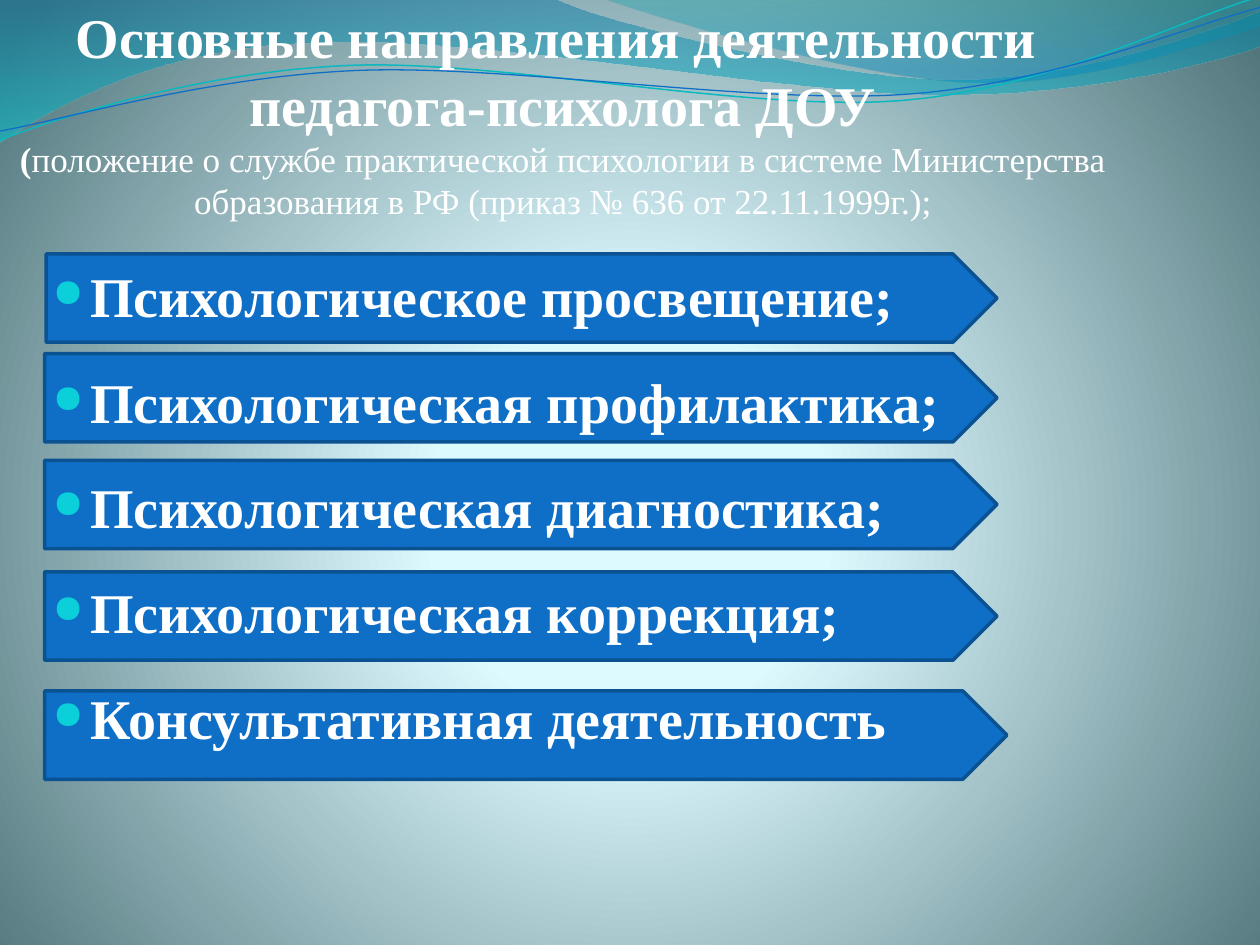
"""Build a slide listing the main lines of work of a preschool psychologist."""
from lxml import etree
from pptx import Presentation
from pptx.dml.color import RGBColor
from pptx.enum.shapes import MSO_SHAPE
from pptx.enum.text import MSO_ANCHOR, PP_ALIGN
from pptx.oxml.ns import qn
from pptx.util import Cm, Pt

PLATE = MSO_SHAPE.PENTAGON
TOP = MSO_ANCHOR.TOP
LEFT, CENTER = PP_ALIGN.LEFT, PP_ALIGN.CENTER
INCH = 2.54

THEME = {
    "font": "Times New Roman", "text": "FFFFFF", "big": 32, "small": 20,
    "plate": "0F6FC6", "edge": "0B5292", "dot": "0BD0D9",
    "back": [(0, "DEFBFF", 100), (25, "DDFAFF", 100), (100, "52767C", 100)],
    "left": [(0, "0074A1", 45), (100, "00C6CF", 55)],
    "right": [(0, "00A1A9", 30), (80, "008BBF", 45)],
    "teal": "0AB8BF", "blue": "0F6FC6",
}
GLOW = '<a:path path="circle"><a:fillToRect l="10000" t="110000" r="10000" b="100000"/></a:path>'
DOWN = '<a:lin ang="5400000" scaled="0"/>'

HEAD = [
    [("Основные направления деятельности \vпедагога-психолога ДОУ\v", "big", True),
     ("(", "small", True),
     ("положение о службе практической психологии в системе Министерства "
      "образования в РФ (приказ № 636 от 22.11.1999г.);", "small", False)],
]
ITEMS = [
    "Психологическое просвещение;",
    "Психологическая профилактика;",
    "Психологическая диагностика;",
    "Психологическая коррекция;",
    "Консультативная деятельность",
]
PLATES = [(0.93, 5.12, 19.17), (0.9, 7.13, 19.2), (0.9, 9.28, 19.2),
          (0.9, 11.53, 19.2), (0.9, 13.93, 19.4)]
PLATE_H = 1.78

BANDS = [
    ("left", [(0, -0.01), (4.4, -0.01),
              (4.76, 0.17, 6.64, 0.63, 7.58, 0.63), (8.53, 0.63, 9.58, 0.26, 10, 0.09),
              (10.01, 0.36), (9.83, 0.44, 8.7, 0.76, 7.46, 0.75),
              (6.22, 0.75, 3.82, 0.28, 2.57, 0.34), (1.29, 0.35, 0.46, 0.83, -0.01, 1.13)]),
    ("right", [(4.79, -0.01), (5.09, 0.11, 6.82, 0.62, 7.69, 0.65),
               (8.56, 0.69, 9.61, 0.32, 10, 0.21), (10, 0)]),
]
WAVES = [
    ("teal", 0.85, [(0, 1.11), (0.48, 0.93, 1.58, 0.57, 2.77, 0.52),
                    (3.95, 0.47, 5.93, 0.89, 7.13, 0.8), (8.33, 0.71, 9.38, 0.15, 9.98, -0.02)]),
    ("blue", 0.75, [(0, 1.04), (0.47, 0.96, 1.64, 0.61, 2.83, 0.56),
                    (4.03, 0.51, 5.97, 0.83, 7.17, 0.75), (8.36, 0.67, 9.41, 0.21, 10, 0.06)]),
]


def assign(thing, **values):
    for name, value in values.items():
        setattr(thing, name, value)


def color(name):
    return RGBColor.from_string(THEME[name])


def blend(holder, name, course):
    stops = "".join(
        f'<a:gs pos="{pos * 1000}"><a:srgbClr val="{rgb}"><a:alpha val="{alpha * 1000}"/>'
        f'</a:srgbClr></a:gs>' for pos, rgb, alpha in THEME[name])
    space = "http://schemas.openxmlformats.org/drawingml/2006/main"
    grad = etree.fromstring(
        f'<a:gradFill xmlns:a="{space}" rotWithShape="1"><a:gsLst>{stops}</a:gsLst>{course}</a:gradFill>')
    holder.replace(holder.find(qn("a:solidFill")), grad)


def outline(slide, moves, close):
    spots = [(Cm(move[i] * INCH), Cm(move[i + 1] * INCH))
             for move in moves for i in range(0, len(move), 2)]
    pen = slide.shapes.build_freeform(*spots[0])
    pen.add_line_segments(spots[1:], close=close)
    shape = pen.convert_to_shape()
    shape.shadow.inherit = False
    lines = iter(list(shape.element.iter(qn("a:lnTo"))))
    for move in moves[1:]:
        line = next(lines)
        if len(move) == 6:
            curve = etree.Element(qn("a:cubicBezTo"))
            line.addprevious(curve)
            for part in (line, next(lines), next(lines)):
                curve.append(part[0])
                part.getparent().remove(part)
    return shape


def stroke(shape, name, width):
    shape.line.color.rgb = color(name)
    shape.line.width = Pt(width)


def write(slide, box, pad, paras, **style):
    frame = slide.shapes.add_textbox(*map(Cm, box)).text_frame
    assign(frame, word_wrap=True, vertical_anchor=TOP, margin_left=Cm(pad),
           margin_right=Cm(pad), margin_top=0, margin_bottom=0)
    for index, runs in enumerate(paras):
        para = frame.paragraphs[0] if index == 0 else frame.add_paragraph()
        assign(para, **style)
        for text, size, bold in runs:
            for place, piece in enumerate(text.split("\v")):
                if place:
                    para.add_line_break()
                if piece:
                    run = para.add_run()
                    run.text = piece
                    assign(run.font, name=THEME["font"], size=Pt(THEME[size]), bold=bold)
                    run.font.color.rgb = color("text")
    return frame


def bullet(para):
    props = para._p.get_or_add_pPr()
    props.set("marL", str(Cm(0.76)))
    props.set("indent", str(-Cm(0.76)))
    tint = etree.SubElement(props, qn("a:buClr"))
    etree.SubElement(tint, qn("a:srgbClr"), val=THEME["dot"])
    etree.SubElement(props, qn("a:buSzPct"), val="70000")
    etree.SubElement(props, qn("a:buChar"), char="●")


def main():
    deck = Presentation()
    assign(deck, slide_width=Cm(25.4), slide_height=Cm(19.05))
    slide = deck.slides.add_slide(deck.slide_layouts[6])
    slide.background.fill.solid()
    blend(slide.element.find(".//" + qn("p:bgPr")), "back", GLOW)

    for name, moves in BANDS:
        band = outline(slide, moves, True)
        band.fill.solid()
        band.line.fill.background()
        blend(band.element.spPr, name, DOWN)
    for name, width, moves in WAVES:
        wave = outline(slide, moves, False)
        wave.fill.background()
        stroke(wave, name, width)

    write(slide, (0, 0.06, 22.7, 5), 0, HEAD, alignment=CENTER, line_spacing=1.0)
    for left, top, width in PLATES:
        plate = slide.shapes.add_shape(PLATE, *map(Cm, (left, top, width, PLATE_H)))
        plate.shadow.inherit = False
        plate.fill.solid()
        plate.fill.fore_color.rgb = color("plate")
        stroke(plate, "edge", 2)
    tasks = write(slide, (0.81, 5.28, 18.7, 11.3), 0.25, [[(item, "big", True)] for item in ITEMS],
                  alignment=LEFT, space_after=Pt(21.8))
    for para in tasks.paragraphs:
        bullet(para)
    deck.save("out.pptx")


if __name__ == "__main__":
    main()
